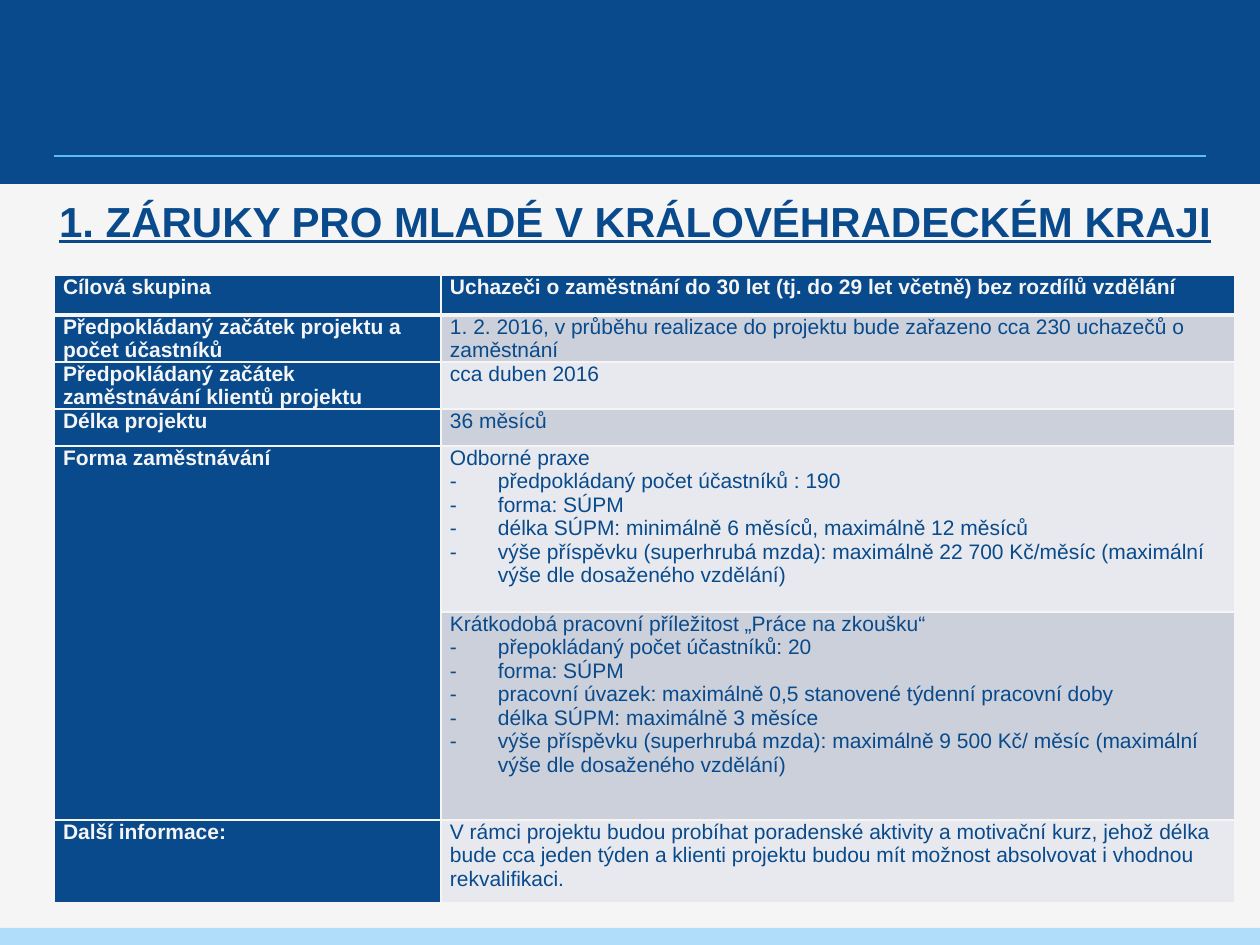
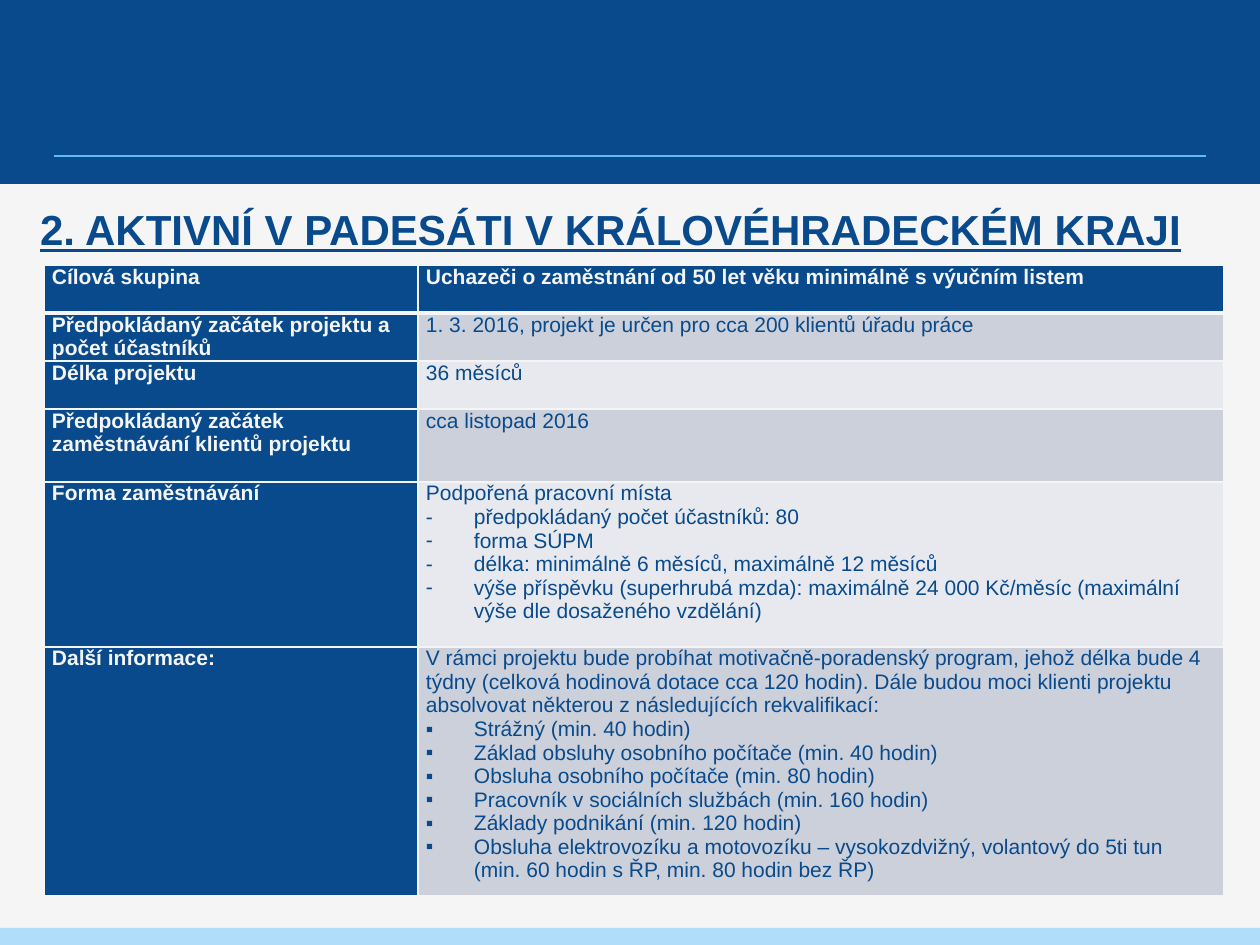
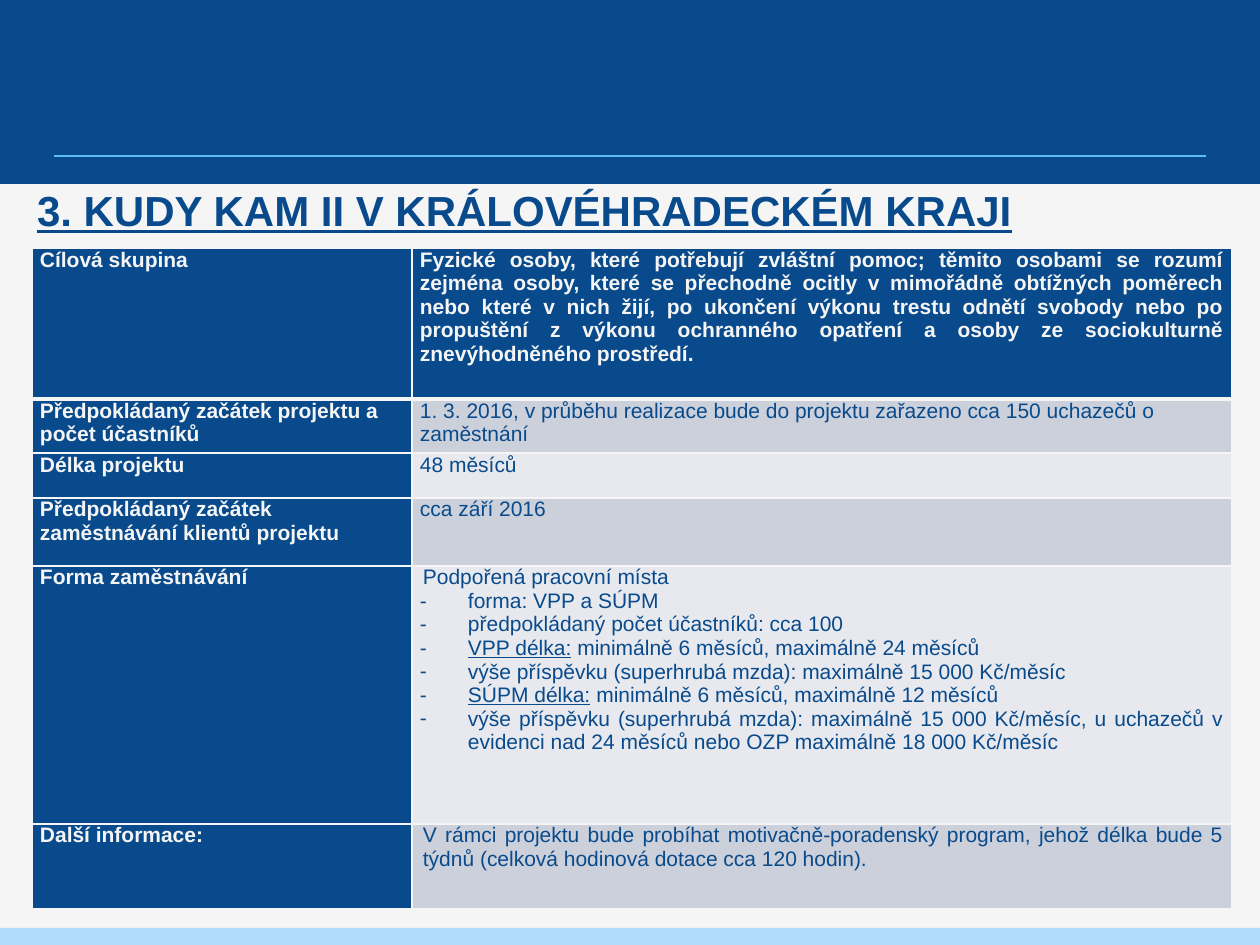
"""Build three slides on employment projects in the Hradec Králové region."""
import lxml.etree
import pptx
import pptx.dml.color
import pptx.enum.shapes
import pptx.enum.text
import pptx.oxml
import pptx.oxml.ns
import pptx.util

EMU_PER_PX = 914400 / 126
SLIDE_WIDTH, SLIDE_HEIGHT = 1260, 945
HEADER_HEIGHT, FOOTER_TOP = 184, 928
RULE_LEFT, RULE_RIGHT, RULE_TOP = 54, 1206, 156
BULLET_INDENT, JUSTIFIED_INDENT = 48, 3
TITLE_HEIGHT, TITLE_INSET = 80, 5
FONT = "Arial"
TITLE_SIZE, TABLE_SIZE = 24, 12
BORDER, HEADER_BORDER = 1, 3
COLORS = {
    "navy": "084A8B",
    "paper": "F5F5F5",
    "footer": "AFDDFA",
    "rule": "5FBBF5",
    "odd row": "CCD0DA",
    "even row": "E7E9EE",
}

TARGET = "Cílová skupina"
START = "Předpokládaný začátek projektu a počet účastníků"
EMPLOYMENT_START = "Předpokládaný začátek zaměstnávání klientů projektu"
LENGTH = "Délka projektu"
FORM = "Forma zaměstnávání"
MORE = "Další informace:"

PROJECTS = [
    {
        "title": "1. ZÁRUKY PRO MLADÉ V KRÁLOVÉHRADECKÉM KRAJI",
        "title box": (54, 195, 1166),
        "table corner": (54, 275),
        "columns": (387, 794),
        "heights": (40, 47, 47, 37, 166, 208, 83),
        "inset": 9,
        "justified": (),
        "rows": [
            (TARGET, ["Uchazeči o zaměstnání do 30 let (tj. do 29 let včetně) bez rozdílů vzdělání"]),
            (START, ["1. 2. 2016, v průběhu realizace do projektu bude zařazeno cca 230 uchazečů o zaměstnání"]),
            (EMPLOYMENT_START, ["cca duben 2016"]),
            (LENGTH, ["36 měsíců"]),
            (FORM, ["Odborné praxe", ("-", [
                "předpokládaný počet účastníků : 190",
                "forma: SÚPM",
                "délka SÚPM: minimálně 6 měsíců, maximálně 12 měsíců",
                "výše příspěvku (superhrubá mzda): maximálně 22 700 Kč/měsíc "
                "(maximální výše dle dosaženého vzdělání)",
            ])]),
            (None, ["Krátkodobá pracovní příležitost „Práce na zkoušku“", ("-", [
                "přepokládaný počet účastníků: 20",
                "forma: SÚPM",
                "pracovní úvazek: maximálně 0,5 stanovené týdenní pracovní doby",
                "délka SÚPM: maximálně 3 měsíce",
                "výše příspěvku (superhrubá mzda): maximálně 9 500 Kč/ měsíc "
                "(maximální výše dle dosaženého vzdělání)",
            ])]),
            (MORE, [
                "V rámci projektu budou probíhat poradenské aktivity a motivační kurz, jehož délka "
                "bude cca jeden týden a klienti projektu budou mít možnost absolvovat i vhodnou "
                "rekvalifikaci."
            ]),
        ],
    },
    {
        "title": "2. AKTIVNÍ V PADESÁTI V KRÁLOVÉHRADECKÉM KRAJI",
        "title box": (35, 204, 1201),
        "table corner": (44, 265),
        "columns": (374, 806),
        "heights": (48, 48, 48, 73, 165, 249),
        "inset": 8,
        "justified": (),
        "rows": [
            (TARGET, ["Uchazeči o zaměstnání od 50 let věku minimálně s výučním listem"]),
            (START, ["1. 3. 2016, projekt je určen pro cca 200 klientů úřadu práce"]),
            (LENGTH, ["36 měsíců"]),
            (EMPLOYMENT_START, ["cca listopad 2016"]),
            (FORM, ["Podpořená pracovní místa", ("-", [
                "předpokládaný počet účastníků: 80",
                "forma SÚPM",
                "délka: minimálně 6 měsíců, maximálně 12 měsíců",
                "výše příspěvku (superhrubá mzda): maximálně 24 000 Kč/měsíc "
                "(maximální výše dle dosaženého vzdělání)",
            ])]),
            (MORE, [
                "V rámci projektu bude probíhat motivačně-poradenský program, jehož délka bude 4 "
                "týdny (celková hodinová dotace cca 120 hodin). Dále budou moci klienti projektu "
                "absolvovat některou z následujících rekvalifikací:",
                ("▪", [
                    "Strážný (min. 40 hodin)",
                    "Základ obsluhy osobního počítače (min. 40 hodin)",
                    "Obsluha osobního počítače (min. 80 hodin)",
                    "Pracovník v sociálních službách (min. 160 hodin)",
                    "Základy podnikání (min. 120 hodin)",
                    "Obsluha elektrovozíku a motovozíku – vysokozdvižný, volantový do 5ti tun "
                    "(min. 60 hodin s ŘP, min. 80 hodin bez ŘP)",
                ]),
            ]),
        ],
    },
    {
        "title": "3. KUDY KAM II V KRÁLOVÉHRADECKÉM KRAJI",
        "title box": (32, 185, 1201),
        "table corner": (32, 248),
        "columns": (380, 820),
        "heights": (151, 54, 45, 68, 258, 85),
        "inset": 8,
        "justified": (0, 4, 5),
        "rows": [
            (TARGET, [
                "Fyzické osoby, které potřebují zvláštní pomoc; těmito osobami se rozumí zejména "
                "osoby, které se přechodně ocitly v mimořádně obtížných poměrech nebo které v nich "
                "žijí, po ukončení výkonu trestu odnětí svobody nebo po propuštění z výkonu "
                "ochranného opatření a osoby ze sociokulturně znevýhodněného prostředí."
            ]),
            (START, ["1. 3. 2016, v průběhu realizace bude do projektu zařazeno cca 150 uchazečů o zaměstnání"]),
            (LENGTH, ["48 měsíců"]),
            (EMPLOYMENT_START, ["cca září 2016"]),
            (FORM, ["Podpořená pracovní místa", ("-", [
                "forma: VPP a SÚPM",
                "předpokládaný počet účastníků: cca 100",
                ("VPP délka:", " minimálně 6 měsíců, maximálně 24 měsíců"),
                "výše příspěvku (superhrubá mzda): maximálně 15 000 Kč/měsíc",
                ("SÚPM délka:", " minimálně 6 měsíců, maximálně 12 měsíců"),
                "výše příspěvku (superhrubá mzda): maximálně 15 000 Kč/měsíc, u uchazečů "
                "v evidenci nad 24 měsíců nebo OZP maximálně 18 000 Kč/měsíc",
            ])]),
            (MORE, [
                "V rámci projektu bude probíhat motivačně-poradenský program, jehož délka bude 5 "
                "týdnů (celková hodinová dotace cca 120 hodin)."
            ]),
        ],
    },
]


def px(length):
    return pptx.util.Emu(round(length * EMU_PER_PX))


def rgb(name):
    return pptx.dml.color.RGBColor.from_string(COLORS[name])


def add_element(parent, tag, **attributes):
    return lxml.etree.SubElement(parent, pptx.oxml.ns.qn(tag), attributes)


def add_run(paragraph, text, size, color, bold, underline=False):
    run = paragraph.add_run()
    run.text = text
    run.font.name = FONT
    run.font.size = pptx.util.Pt(size)
    run.font.color.rgb = rgb(color)
    run.font.bold = bold
    run.font.underline = underline


def set_indent(paragraph, left, bullet=None):
    properties = paragraph._p.get_or_add_pPr()
    properties.set("marL", str(px(left)))
    properties.set("indent", str(-px(left) if bullet else 0))
    if bullet:
        add_element(properties, "a:buFont", typeface=FONT)
        add_element(properties, "a:buChar", char=bullet)


def decorate_master(master, slide):
    """Draw the shared bands and rule, then move them behind the master's placeholders."""
    master.background.fill.solid()
    master.background.fill.fore_color.rgb = rgb("paper")
    parts = []
    for top, bottom, color in ((0, HEADER_HEIGHT, "navy"), (FOOTER_TOP, SLIDE_HEIGHT, "footer")):
        band = slide.shapes.add_shape(
            pptx.enum.shapes.MSO_SHAPE.RECTANGLE, 0, px(top), px(SLIDE_WIDTH), px(bottom - top))
        band.shadow.inherit = False
        band.fill.solid()
        band.fill.fore_color.rgb = rgb(color)
        band.line.fill.background()
        parts.append(band)
    rule = slide.shapes.add_connector(
        pptx.enum.shapes.MSO_CONNECTOR.STRAIGHT,
        px(RULE_LEFT), px(RULE_TOP), px(RULE_RIGHT), px(RULE_TOP))
    rule.line.color.rgb = rgb("rule")
    rule.line.width = pptx.util.Pt(1)
    add_element(rule.element.spPr, "a:effectLst")
    parts.append(rule)
    for position, part in enumerate(parts, start=2):
        master.shapes.element.insert(position, part.element)


def add_title(slide, project):
    title = slide.shapes.title
    left, top, width = project["title box"]
    title.left, title.top, title.width, title.height = map(px, (left, top, width, TITLE_HEIGHT))
    frame = title.text_frame
    frame.margin_left = frame.margin_right = px(TITLE_INSET)
    frame.margin_top = frame.margin_bottom = 0
    frame.word_wrap = True
    frame.auto_size = pptx.enum.text.MSO_AUTO_SIZE.NONE
    frame.vertical_anchor = pptx.enum.text.MSO_ANCHOR.TOP
    paragraph = frame.paragraphs[0]
    paragraph.alignment = pptx.enum.text.PP_ALIGN.LEFT
    add_run(paragraph, project["title"], TITLE_SIZE, "navy", True, True)


def format_cell(cell, row, fill, inset):
    cell.margin_left = cell.margin_right = px(inset)
    cell.margin_top = cell.margin_bottom = 0
    widths = {"L": BORDER, "R": BORDER,
              "T": HEADER_BORDER if row == 1 else BORDER,
              "B": HEADER_BORDER if row == 0 else BORDER}
    properties = cell._tc.get_or_add_tcPr()
    for side, width in widths.items():
        line = add_element(properties, f"a:ln{side}", w=str(pptx.util.Pt(width)))
        solid = add_element(line, "a:solidFill")
        add_element(solid, "a:srgbClr", val=COLORS["paper"])
    cell.fill.solid()
    cell.fill.fore_color.rgb = rgb(fill)


def write_cell(cell, blocks, color, bold, justified=False, plain_indent=0):
    lines = []
    for block in blocks:
        if isinstance(block, str):
            lines.append((None, block))
        else:
            bullet, items = block
            lines.extend((bullet, item) for item in items)
    frame = cell.text_frame
    for number, (bullet, text) in enumerate(lines):
        paragraph = frame.add_paragraph() if number else frame.paragraphs[0]
        set_indent(paragraph, BULLET_INDENT if bullet else plain_indent, bullet)
        alignments = pptx.enum.text.PP_ALIGN
        paragraph.alignment = alignments.JUSTIFY if justified else alignments.LEFT
        if isinstance(text, str):
            add_run(paragraph, text, TABLE_SIZE, color, bold)
        else:
            underlined, rest = text
            add_run(paragraph, underlined, TABLE_SIZE, color, bold, True)
            add_run(paragraph, rest, TABLE_SIZE, color, bold)


def add_project_table(slide, project):
    rows, columns, heights = project["rows"], project["columns"], project["heights"]
    left, top = project["table corner"]
    table = slide.shapes.add_table(
        len(rows), len(columns), px(left), px(top), px(sum(columns)), px(sum(heights))).table
    for column, width in zip(table.columns, columns):
        column.width = px(width)
    for number, (label, blocks) in enumerate(rows):
        table.rows[number].height = px(heights[number])
        label_cell, detail_cell = table.cell(number, 0), table.cell(number, 1)
        is_header = number == 0
        stripe = "navy" if is_header else "odd row" if number % 2 else "even row"
        format_cell(label_cell, number, "navy", project["inset"])
        format_cell(detail_cell, number, stripe, project["inset"])
        if label:
            write_cell(label_cell, [label], "paper", True)
        else:
            table.cell(number - 1, 0).merge(label_cell)
        justified = number in project["justified"]
        write_cell(detail_cell, blocks, "paper" if is_header else "navy", is_header, justified,
                   JUSTIFIED_INDENT if justified and not is_header else 0)


def main():
    presentation = pptx.Presentation()
    presentation.slide_width, presentation.slide_height = px(SLIDE_WIDTH), px(SLIDE_HEIGHT)
    layout = presentation.slide_layouts.get_by_name("Title Only")
    for number, project in enumerate(PROJECTS):
        slide = presentation.slides.add_slide(layout)
        if number == 0:
            decorate_master(presentation.slide_master, slide)
        add_title(slide, project)
        add_project_table(slide, project)
    presentation.save("out.pptx")


if __name__ == "__main__":
    main()
